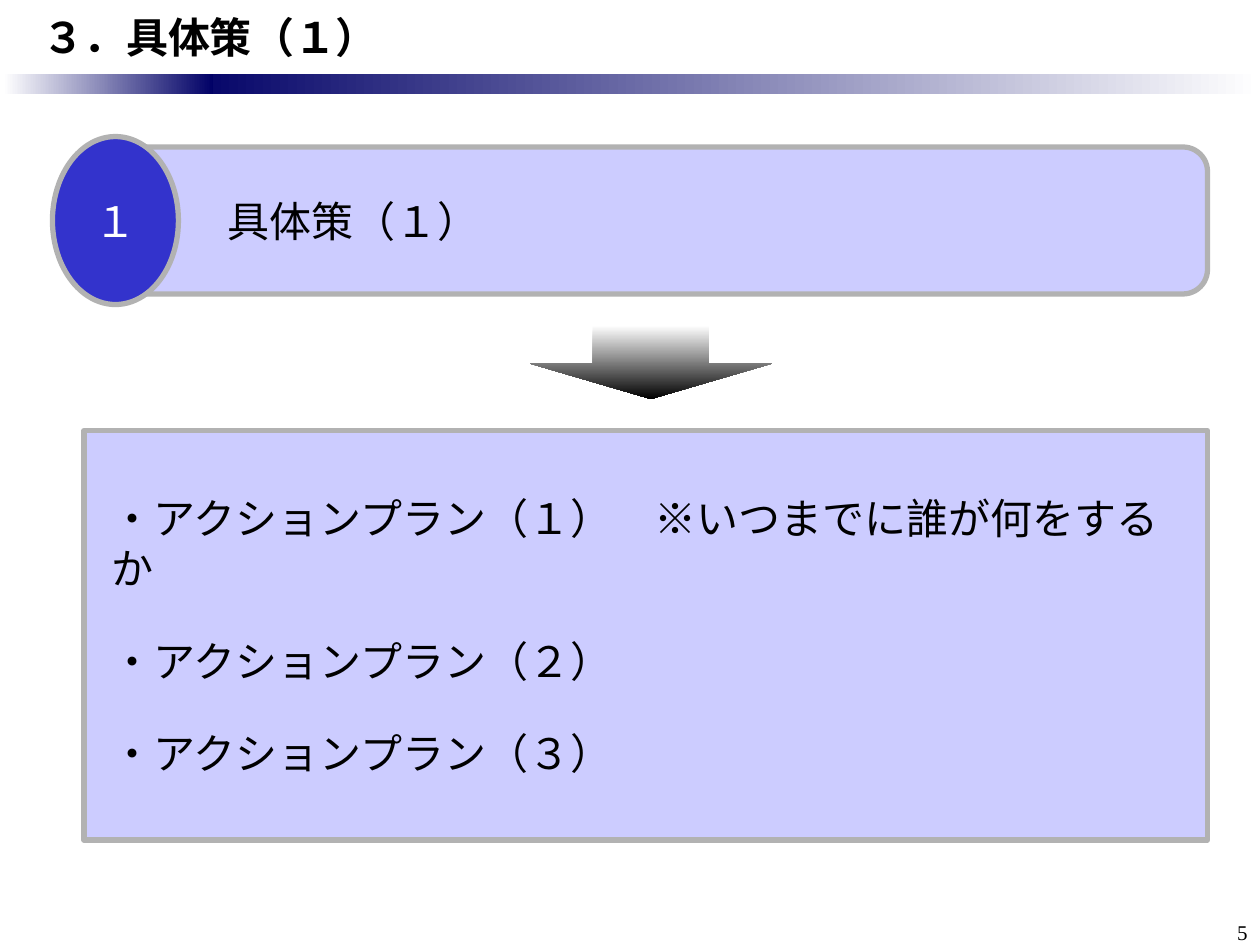
from pptx import Presentation
from pptx.dml.color import RGBColor
from pptx.enum.shapes import MSO_SHAPE
from pptx.enum.text import MSO_ANCHOR, MSO_AUTO_SIZE, PP_ALIGN
from pptx.oxml.ns import qn
from pptx.util import Pt
from lxml import etree

COLORS = {
    "text": "000000", "white": "FFFFFF", "black": "000000", "navy": "000066",
    "panel": "CCCCFF", "badge": "3333CC", "border": "B2B2B2",
}
BODY_FONT = "Noto Sans CJK JP"
NUMBER_FONT = "Times New Roman"


def rgb(name):
    return RGBColor.from_string(COLORS[name])


def set_text(sp, lines, size=24, color="text", bold=False, font=BODY_FONT,
             align=PP_ALIGN.LEFT, anchor=MSO_ANCHOR.MIDDLE, left=7.2, gap=0):
    """Fill a shape with one paragraph per line, gap points apart."""
    tf = sp.text_frame
    tf.word_wrap = True
    tf.auto_size = MSO_AUTO_SIZE.NONE
    tf.vertical_anchor = anchor
    tf.margin_left, tf.margin_right = Pt(left), Pt(7.2)
    tf.margin_top = tf.margin_bottom = Pt(3.6)
    tf.text = "\n".join(lines)
    for i, p in enumerate(tf.paragraphs):
        p.alignment = align
        p.space_before = Pt(gap if i else 0)
        for r in p.runs:
            r.font.size, r.font.bold, r.font.name = Pt(size), bold, font
            r.font.color.rgb = rgb(color)
            latin = r.font._element.find(qn("a:latin"))
            ea = etree.Element(qn("a:ea"), typeface=font)
            latin.addnext(ea)


def add_box(s, kind, x, y, w, h, fill=None):
    """Add a shape without shadow; a filled one gets the grey border."""
    sp = s.shapes.add_shape(kind, Pt(x), Pt(y), Pt(w), Pt(h))
    sp.shadow.inherit = False
    if fill:
        sp.fill.solid()
        sp.fill.fore_color.rgb = rgb(fill)
        sp.line.color.rgb = rgb("border")
        sp.line.width = Pt(3)
    else:
        sp.line.fill.background()
    return sp


def add_gradient(s, kind, x, y, w, h, start, end, angle=0):
    sp = add_box(s, kind, x, y, w, h)
    sp.fill.gradient()
    sp.fill.gradient_angle = angle
    for stop, name, position in zip(sp.fill.gradient_stops, (start, end), (0, 1)):
        stop.color.rgb = rgb(name)
        stop.position = position
    return sp


def add_header(s, x, y, w, h, text):
    """Place the title with the fading band below it."""
    title = s.shapes.title
    title.left, title.top, title.width, title.height = Pt(x), Pt(y), Pt(w), Pt(h)
    set_text(title, [text], bold=True, left=24)
    peak, band = 102, 12
    add_gradient(s, MSO_SHAPE.RECTANGLE, x + peak, y + h, w - peak, band, "navy", "white")
    add_gradient(s, MSO_SHAPE.RECTANGLE, x + 2, y + h, 120, band, "white", "navy")


def add_measure(s, x, y, w, h, number, text):
    """Place the numbered bar; the badge overlaps its left end."""
    badge_w = 72
    bar_x, inset = x + badge_w / 3, 6
    bar = add_box(s, MSO_SHAPE.ROUNDED_RECTANGLE, bar_x, y + inset,
                  x + w - bar_x, h - 2 * inset, "panel")
    bar.adjustments[0] = 0.167
    set_text(bar, [text], left=72)
    badge = add_box(s, MSO_SHAPE.OVAL, x, y, badge_w, h, "badge")
    set_text(badge, [number], color="white", align=PP_ALIGN.CENTER)


def add_down_arrow(s, x, y, w, h):
    arrow = add_gradient(s, MSO_SHAPE.DOWN_ARROW, x, y, w, h, "white", "black", 270)
    arrow.adjustments[0] = 0.48
    arrow.adjustments[1] = 0.48


def add_action_plans(s, x, y, w, h, plans):
    panel = add_box(s, MSO_SHAPE.RECTANGLE, x, y, w, h, "panel")
    set_text(panel, plans, left=16, gap=24)


def add_page_number(s, x, y, w, h, number):
    tb = s.shapes.add_textbox(Pt(x), Pt(y), Pt(w), Pt(h))
    set_text(tb, [number], size=12, font=NUMBER_FONT,
             align=PP_ALIGN.RIGHT, anchor=MSO_ANCHOR.TOP)


def main():
    prs = Presentation()
    prs.slide_width, prs.slide_height = Pt(720), Pt(540)
    s = prs.slides.add_slide(prs.slide_layouts[5])
    add_header(s, 0, 0, 720, 42, "３．具体策（１）")
    add_measure(s, 30, 78, 660, 96, "１", "具体策（１）")
    add_down_arrow(s, 303, 186, 138, 42)
    add_action_plans(s, 48, 246, 642, 234, [
        "・アクションプラン（１）　※いつまでに誰が何をするか",
        "・アクションプラン（２）",
        "・アクションプラン（３）",
    ])
    add_page_number(s, 678, 522, 42, 18, "5")
    prs.save("out.pptx")


if __name__ == "__main__":
    main()
